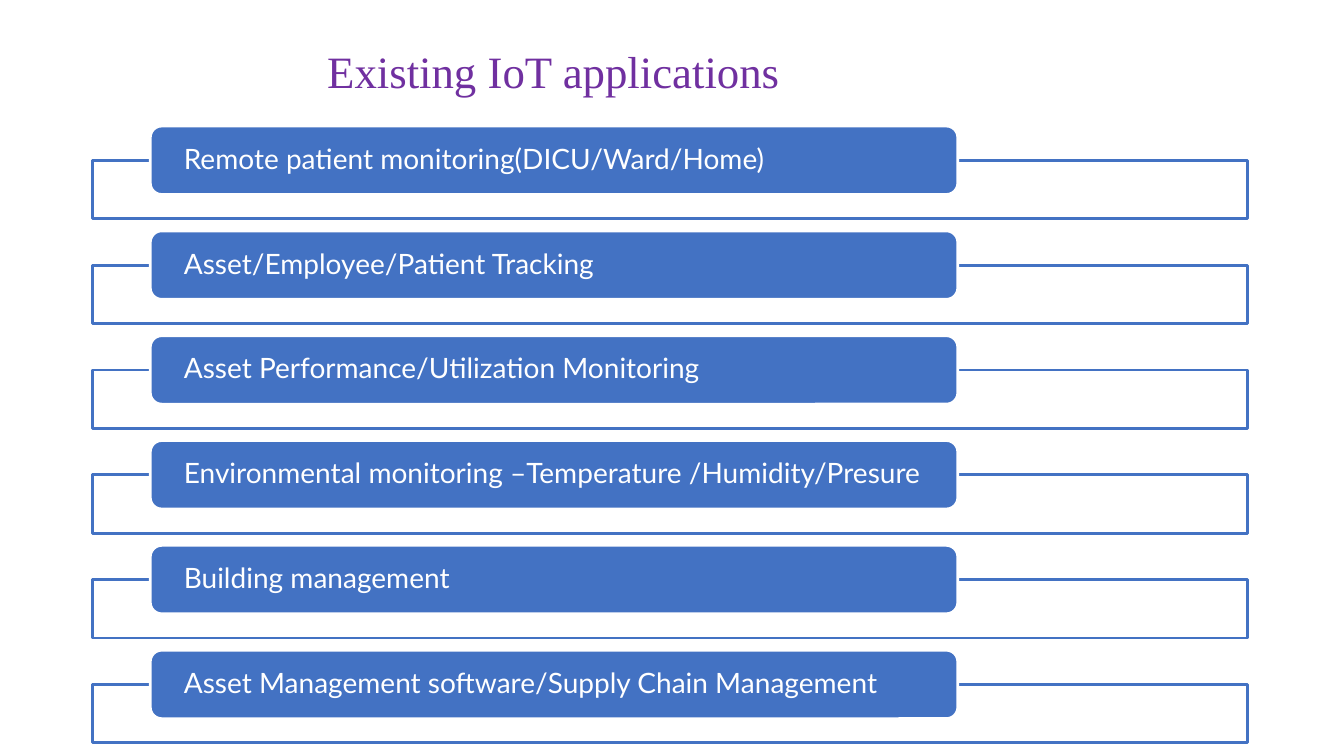
from dataclasses import dataclass

from lxml import etree
from pptx import Presentation
from pptx.dml.color import RGBColor
from pptx.enum.shapes import MSO_SHAPE
from pptx.enum.text import MSO_ANCHOR, PP_ALIGN
from pptx.oxml.ns import qn
from pptx.util import Inches, Pt

RECTANGLE = MSO_SHAPE.RECTANGLE
ROUNDED = MSO_SHAPE.ROUNDED_RECTANGLE
MIDDLE = MSO_ANCHOR.MIDDLE
LEFT, CENTER = PP_ALIGN.LEFT, PP_ALIGN.CENTER


@dataclass(frozen=True)
class Theme:
    blue: RGBColor = RGBColor(0x43, 0x72, 0xC3)
    white: RGBColor = RGBColor(0xFF, 0xFF, 0xFF)
    purple: RGBColor = RGBColor(0x70, 0x30, 0xA0)
    title_font: str = "Times New Roman"
    body_font: str = "Lato"
    title_size: int = 32
    body_size: int = 20
    line_width: int = 2
    line_spacing: float = 0.9


class SlideBuilder:
    """Holds the theme and the current slide."""

    def __init__(self, page, theme):
        self.page = page
        self.theme = theme

    def set_text(self, box, text, font, size, color, align, margins):
        frame = box.text_frame
        frame.word_wrap = True
        frame.vertical_anchor = MIDDLE
        side, edge = margins
        frame.margin_left = frame.margin_right = Inches(side)
        frame.margin_top = frame.margin_bottom = Inches(edge)
        para = frame.paragraphs[0]
        para.alignment = align
        para.line_spacing = self.theme.line_spacing
        span = para.add_run()
        span.text = text
        span.font.name = font
        span.font.size = Pt(size)
        span.font.color.rgb = color

    def title(self, text, left, top, width, height):
        box = self.page.shapes.add_textbox(*map(Inches, (left, top, width, height)))
        self.set_text(box, text, self.theme.title_font, self.theme.title_size,
                      self.theme.purple, CENTER, (0.1, 0.05))

    def panel(self, kind, left, top, width, height, fill, line):
        box = self.page.shapes.add_shape(kind, *map(Inches, (left, top, width, height)))
        box.shadow.inherit = False
        box.fill.solid()
        box.fill.fore_color.rgb = fill
        box.line.color.rgb = line
        box.line.width = Pt(self.theme.line_width)
        return box

    def frame(self, left, top, width, height):
        box = self.panel(RECTANGLE, left, top, width, height,
                         self.theme.white, self.theme.blue)
        # Slightly transparent fill
        color = box.element.spPr.find(qn("a:solidFill"))[0]
        etree.SubElement(color, qn("a:alpha"), val="89000")

    def label(self, text, left, top, width, height):
        box = self.panel(ROUNDED, left, top, width, height,
                         self.theme.blue, self.theme.white)
        box.adjustments[0] = 0.167
        self.set_text(box, text, self.theme.body_font, self.theme.body_size,
                      self.theme.white, LEFT, (0.3, 0))


APPLICATIONS = [
    "Remote patient monitoring(DICU/Ward/Home)",
    "Asset/Employee/Patient Tracking",
    "Asset Performance/Utilization Monitoring",
    "Environmental monitoring –Temperature /Humidity/Presure",
    "Building management",
    "Asset Management software/Supply Chain Management",
]
FIRST_TOP = 1.25
ROW_PITCH = 1.04
FRAME_DROP = 0.34


def main():
    deck = Presentation()
    deck.slide_width, deck.slide_height = Inches(13.33), Inches(7.5)
    builder = SlideBuilder(deck.slides.add_slide(deck.slide_layouts[6]), Theme())

    # Heading
    builder.title("Existing IoT applications", 0, 0.36, 10.98, 0.75)

    # One frame with an overlapping label per application
    for row, application in enumerate(APPLICATIONS):
        top = FIRST_TOP + row * ROW_PITCH
        builder.frame(0.92, top + FRAME_DROP, 11.45, 0.58)
        builder.label(application, 1.49, top, 8.01, 0.68)

    deck.save("out.pptx")


if __name__ == "__main__":
    main()
